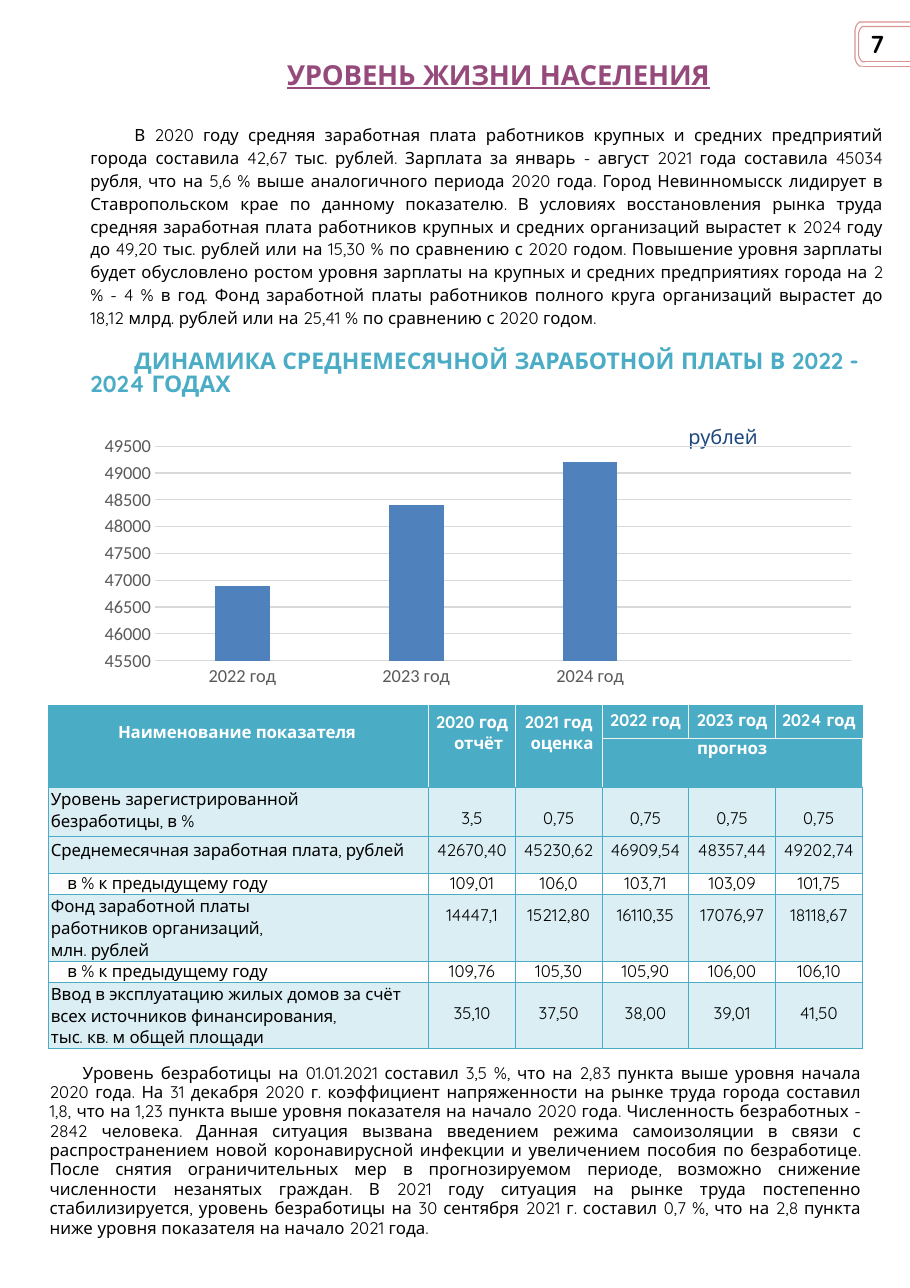
from collections import namedtuple

from lxml.etree import SubElement
from pptx import Presentation
from pptx.chart.data import CategoryChartData
from pptx.dml.color import RGBColor
from pptx.enum.chart import XL_CHART_TYPE, XL_TICK_MARK
from pptx.enum.shapes import MSO_CONNECTOR
from pptx.enum.text import PP_ALIGN
from pptx.oxml.ns import qn
from pptx.util import Inches, Pt

Box = namedtuple("Box", "left top width height")

FONT = "Quicksand"
BLACK, WHITE, PALE = "000000", "FFFFFF", "F2F2F2"
TEAL, ICE, PLUM, NAVY = "4AACC5", "DAEEF3", "964A7B", "1F487C"
ROSE, BLUE, GRAY, GRID = "D99593", "4F81BD", "595959", "D9D9D9"

WAGES = ("В 2020 году средняя заработная плата работников крупных и средних предприятий города "
         "составила 42,67 тыс. рублей. Зарплата за январь - август 2021 года составила 45034 рубля, "
         "что на 5,6 % выше аналогичного периода 2020 года. Город Невинномысск лидирует в "
         "Ставропольском крае по данному показателю. В условиях восстановления рынка труда средняя "
         "заработная плата работников крупных и средних организаций вырастет к 2024 году до 49,20 "
         "тыс. рублей или на 15,30 % по сравнению с 2020 годом. Повышение уровня зарплаты будет "
         "обусловлено ростом уровня зарплаты на крупных и средних предприятиях города на 2 % - 4 % "
         "в год. Фонд заработной платы работников полного круга организаций вырастет до 18,12 млрд. "
         "рублей или на 25,41 % по сравнению с 2020 годом.")
JOBLESS = ("Уровень безработицы на 01.01.2021 составил 3,5 %, что на 2,83 пункта выше уровня начала "
           "2020 года. На 31 декабря 2020 г. коэффициент напряженности на рынке труда города "
           "составил 1,8, что на 1,23 пункта выше уровня показателя на начало 2020 года. "
           "Численность безработных - 2842 человека. Данная ситуация вызвана введением режима "
           "самоизоляции в связи с распространением новой коронавирусной инфекции и увеличением "
           "пособия по безработице. После снятия ограничительных мер в прогнозируемом периоде, "
           "возможно снижение численности незанятых граждан. В 2021 году ситуация на рынке труда "
           "постепенно стабилизируется, уровень безработицы на 30 сентября 2021 г. составил 0,7 %, "
           "что на 2,8 пункта ниже уровня показателя на начало 2021 года.")

FORECAST_YEARS = ["2022 год", "2023 год", "2024 год"]
# row share, name, indent, right margin, top margin of name, top margin of values, values
INDICATORS = [
    (14.3, "Уровень зарегистрированной безработицы, в %", 0.02, 0.7, 0, 0.19,
     "3,5 0,75 0,75 0,75 0,75"),
    (10.7, "Среднемесячная заработная плата, рублей", 0.02, 0, 0.02, 0.03,
     "42670,40 45230,62 46909,54 48357,44 49202,74"),
    (6.1, "в % к предыдущему году", 0.17, 0, 0, 0, "109,01 106,0 103,71 103,09 101,75"),
    (19.5, "Фонд заработной платы работников организаций, млн. рублей", 0.02, 1.3, 0, 0.1,
     "14447,1 15212,80 16110,35 17076,97 18118,67"),
    (6.2, "в % к предыдущему году", 0.17, 0, 0, 0, "109,76 105,30 105,90 106,00 106,10"),
    (18.8, "Ввод в эксплуатацию жилых домов за счёт всех источников финансирования,\n"
           "тыс. кв. м общей площади", 0.02, 0, 0, 0.19, "35,10 37,50 38,00 39,01 41,50"),
]
HEADER_SHARES = [9.6, 14.2]


def rgb(value):
    return RGBColor.from_string(value)


def part(box, left, top, width, height):
    """Return the area of box given in percent of its size."""
    return Box(int(box.left + box.width * left / 100), int(box.top + box.height * top / 100),
               int(box.width * width / 100), int(box.height * height / 100))


def write(frame, text, size, color, align=PP_ALIGN.LEFT, bold=False, spacing=None,
          left=0, first=0, right=0, tight=False):
    """Fill a text frame; left, first and right are indents in inches."""
    frame.word_wrap = True
    frame.text = text
    for paragraph in frame.paragraphs:
        props = paragraph._p.get_or_add_pPr()
        for key, value in (("marL", left), ("marR", right), ("indent", first)):
            props.set(key, str(Inches(value)))
        paragraph.alignment = align
        if spacing:
            paragraph.line_spacing = spacing
        font = paragraph.font
        font.name, font.size, font.bold = FONT, Pt(size), bold
        font.color.rgb = rgb(color)
        if tight:
            for run in paragraph.runs:
                run._r.get_or_add_rPr().set("spc", "-10")


def add_text(slide, box, *args, **kwargs):
    frame = slide.shapes.add_textbox(*box).text_frame
    frame.margin_left = frame.margin_right = frame.margin_top = frame.margin_bottom = 0
    write(frame, *args, **kwargs)
    return frame


def add_number_frame(slide, box, corner):
    """Draw a rounded outline that is open on its right side, with a separate lower edge."""
    left, top, width, height = box
    right, bottom = left + width, top + height
    bend = [(corner * x, corner * y)
            for x, y in ((1, 0), (0.57, 0), (0.29, 0.29), (0.14, 0.57), (0, 1))]
    points = [(left + x, bottom - y) for x, y in bend]
    points += [(left + x, top + y) for x, y in reversed(bend)]
    builder = slide.shapes.build_freeform(*points[0])
    builder.add_line_segments(points[1:] + [(right, top)], close=False)
    outline = builder.convert_to_shape()
    outline.shadow.inherit = False
    outline.fill.background()
    edge = slide.shapes.add_connector(MSO_CONNECTOR.STRAIGHT, right, bottom,
                                      int(left + corner), bottom)
    SubElement(edge._element.spPr, qn("a:effectLst"))
    for stroke in (outline.line, edge.line):
        stroke.color.rgb = rgb(ROSE)
        stroke.width = Pt(0.75)


def add_intro(slide, box):
    add_text(slide, part(box, 0, 0.2, 99.8, 7.3), "7", 16, BLACK, PP_ALIGN.RIGHT, True)
    title = add_text(slide, part(box, 13.6, 7.3, 75.5, 7.4), "УРОВЕНЬ ЖИЗНИ НАСЕЛЕНИЯ",
                     18, PLUM, PP_ALIGN.CENTER, True, Pt(20.4), tight=True)
    title.paragraphs[0].font.underline = True
    add_text(slide, part(box, 0, 22, 99.7, 48.8), WAGES, 11, BLACK, PP_ALIGN.JUSTIFY,
             spacing=Pt(15), left=0.01, first=0.4)
    add_text(slide, part(box, 0, 76.2, 99.5, 10.9),
             "ДИНАМИКА СРЕДНЕМЕСЯЧНОЙ ЗАРАБОТНОЙ ПЛАТЫ В 2022 - 2024 ГОДАХ",
             15, TEAL, bold=True, spacing=Pt(15), left=0.01, first=0.4)
    add_text(slide, part(box, 0, 93.7, 83.9, 6.4), "рублей", 13, NAVY, PP_ALIGN.RIGHT)


def add_wage_chart(slide, box):
    data = CategoryChartData()
    data.categories = FORECAST_YEARS + [""]
    data.add_series("Заработная плата", [46900, 48400, 49200, None])
    chart = slide.shapes.add_chart(XL_CHART_TYPE.COLUMN_CLUSTERED, *box, data).chart
    chart.has_legend = chart.has_title = False
    chart.font.name, chart.font.size = "Calibri", Pt(12)
    chart.font.color.rgb = rgb(GRAY)
    plot = chart.plots[0]
    plot.gap_width, plot.overlap, plot.vary_by_categories = 219, -27, False
    bars = plot.series[0].format.fill
    bars.solid()
    bars.fore_color.rgb = rgb(BLUE)
    years, rubles = chart.category_axis, chart.value_axis
    years.major_tick_mark = rubles.major_tick_mark = XL_TICK_MARK.NONE
    rubles.minimum_scale, rubles.maximum_scale, rubles.major_unit = 45500, 49500, 500
    rubles.format.line.fill.background()
    for line in (years.format.line, rubles.major_gridlines.format.line):
        line.color.rgb = rgb(GRID)
        line.width = Pt(0.75)
    area = chart._chartSpace.chart.plotArea
    for old in area.findall(qn("c:layout")):
        area.remove(old)
    layout = SubElement(area, qn("c:layout"))
    area.insert(0, layout)
    manual = SubElement(layout, qn("c:manualLayout"))
    for tag, value in (("layoutTarget", "inner"), ("xMode", "edge"), ("yMode", "edge"),
                       ("x", "0.085"), ("y", "0.063"), ("w", "0.893"), ("h", "0.815")):
        SubElement(manual, qn("c:" + tag)).set("val", value)


def style_cell(cell, fill, borders):
    """Set fill and the left, right, top and bottom border colours."""
    cell.margin_left = cell.margin_right = cell.margin_top = cell.margin_bottom = 0
    props = cell._tc.get_or_add_tcPr()
    for side, color in zip(("lnL", "lnR", "lnT", "lnB"), borders):
        line = SubElement(props, qn("a:" + side), w=str(Pt(0.5)))
        SubElement(SubElement(line, qn("a:solidFill")), qn("a:srgbClr"), val=color)
    if fill:
        cell.fill.solid()
        cell.fill.fore_color.rgb = rgb(fill)
    else:
        cell.fill.background()


def fill_cell(cell, text, top, color=BLACK, align=PP_ALIGN.CENTER, **kwargs):
    cell.margin_top = Inches(top)
    write(cell.text_frame, text, 11, color, align, **kwargs)


def add_indicator_table(slide, box):
    shares = HEADER_SHARES + [row[0] for row in INDICATORS]
    table = slide.shapes.add_table(len(shares), 6, *box).table
    table.first_row = table.horz_banding = False
    for number, column in enumerate(table.columns):
        column.width = int(box.width * (0.467 if number == 0 else 0.533 / 5))
    for row, share in zip(table.rows, shares):
        row.height = int(box.height * share / 100)

    for r in range(2):
        for c in range(6):
            inner = PALE if c >= 3 else TEAL
            style_cell(table.cell(r, c), TEAL,
                       (PALE if c else TEAL, PALE if c < 5 else TEAL,
                        inner if r else TEAL, TEAL if r else inner))
    for c in range(3):
        table.cell(0, c).merge(table.cell(1, c))
    table.cell(1, 3).merge(table.cell(1, 5))
    header = {"color": WHITE, "bold": True, "tight": True}
    fill_cell(table.cell(0, 0), "Наименование показателя", 0.15, align=PP_ALIGN.LEFT,
              left=0.63, **header)
    for c, year, indent in ((1, "2020 год отчёт", 0.12), (2, "2021 год оценка", 0.06)):
        fill_cell(table.cell(0, c), year, 0.05, spacing=Pt(14.2), left=indent,
                  first=-indent, **header)
    for c, year in enumerate(FORECAST_YEARS, 3):
        fill_cell(table.cell(0, c), year, 0.04, **header)
    fill_cell(table.cell(1, 3), "прогноз", 0, spacing=Pt(13.4), **header)

    for r, (_, name, indent, right, name_top, top, values) in enumerate(INDICATORS, 2):
        is_percent = name.startswith("в %")
        for c in range(6):
            style_cell(table.cell(r, c), None if is_percent else ICE, [TEAL] * 4)
        fill_cell(table.cell(r, 0), name, name_top, align=PP_ALIGN.LEFT, left=indent,
                  right=right, spacing=Pt(13.6 if is_percent else 14.6), tight=True)
        for c, value in enumerate(values.split(), 1):
            fill_cell(table.cell(r, c), value, top, spacing=Pt(13.6))
    table.cell(len(shares) - 1, 0).text_frame.paragraphs[-1].line_spacing = Pt(13.6)


def main():
    deck = Presentation()
    deck.slide_width, deck.slide_height = Inches(8.26), Inches(11.69)
    slide = deck.slides.add_slide(deck.slide_layouts[6])
    page = Box(0, 0, deck.slide_width, deck.slide_height)
    add_number_frame(slide, part(page, 93.95, 1.71, 6.05, 3.42), Inches(0.07))
    add_number_frame(slide, part(page, 94.35, 2.06, 5.65, 2.74), Inches(0.06))
    add_indicator_table(slide, part(page, 5.35, 54.75, 89.42, 26.7))
    add_text(slide, part(page, 5.33, 82.57, 89.35, 13.69), JOBLESS, 11, BLACK,
             PP_ALIGN.JUSTIFY, spacing=0.96, left=0.01, first=0.3)
    add_intro(slide, part(page, 9.81, 2.22, 87.53, 32.85))
    add_wage_chart(slide, part(page, 9.81, 33.36, 85.59, 20.44))
    deck.save("out.pptx")


if __name__ == "__main__":
    main()
